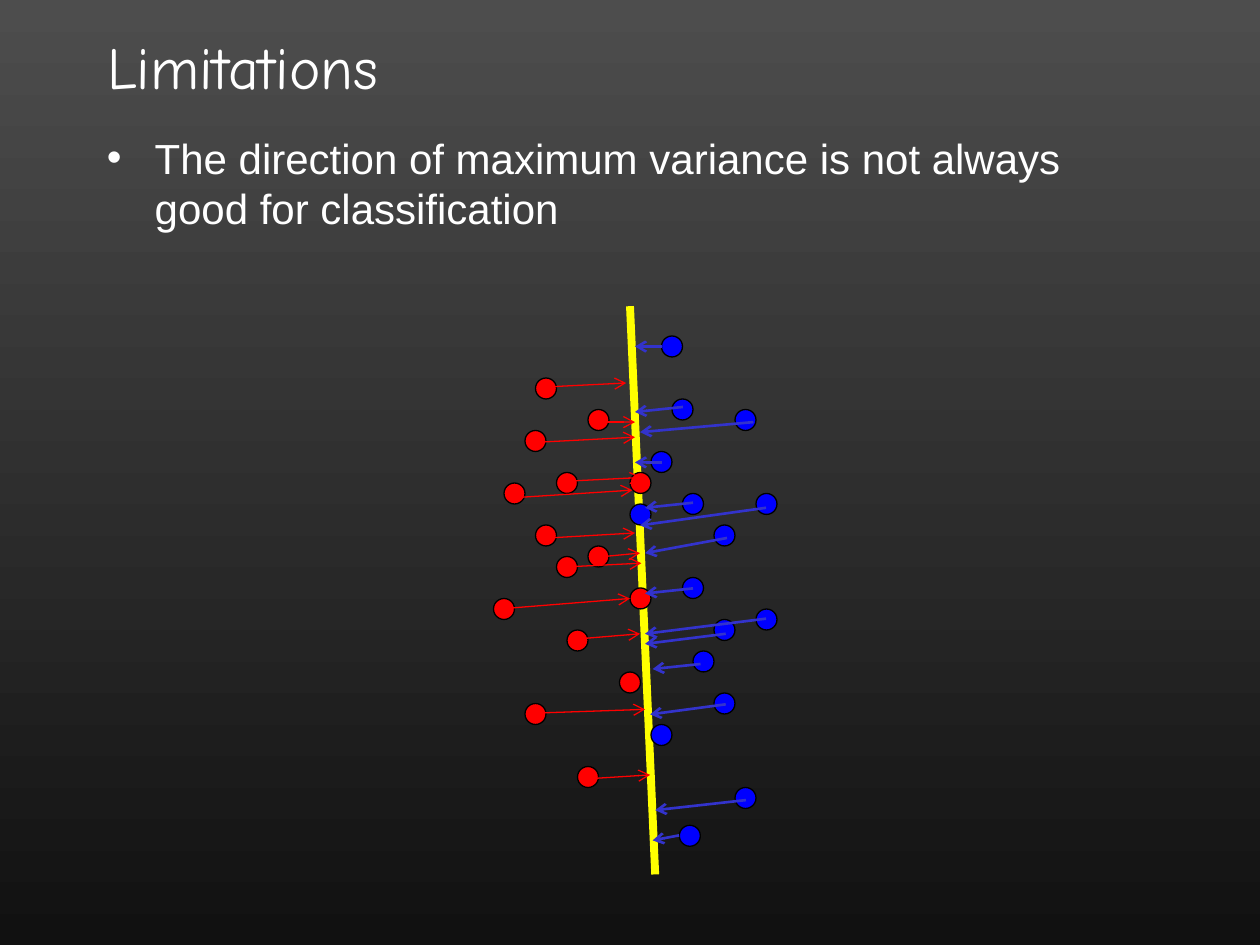
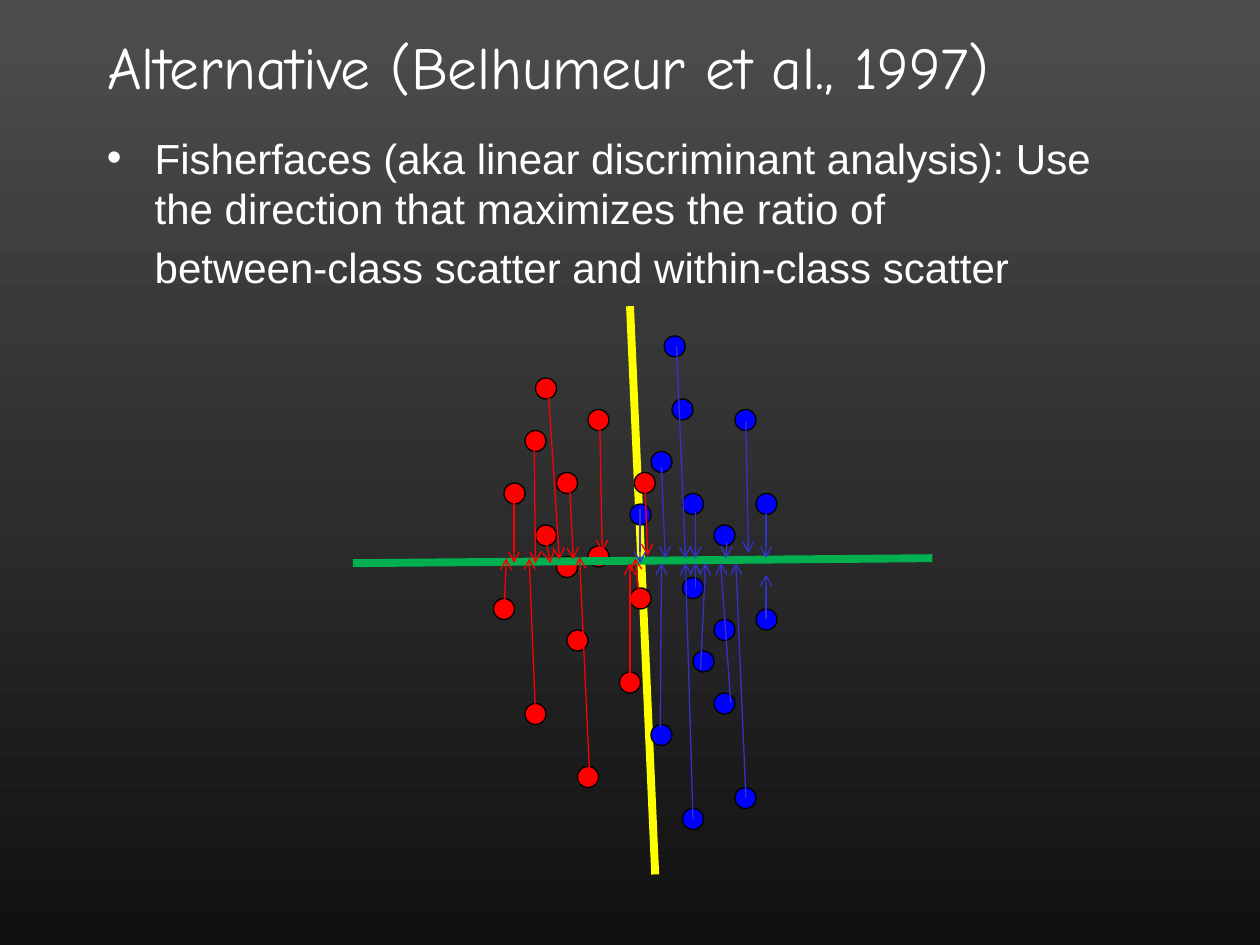
import pptx
import pptx.util
import pptx.dml.color
import pptx.enum.shapes
import pptx.enum.text
import pptx.oxml
import pptx.oxml.ns
from collections import namedtuple
from dataclasses import dataclass

Inches = pptx.util.Inches
Pt = pptx.util.Pt


@dataclass(frozen=True)
class Theme:
    sky: str = "4D4D4D"
    ground: str = "111111"
    ink: str = "FFFFFF"
    outline: str = "000000"
    red_class: str = "FF0000"
    blue_class: str = "0000FF"
    blue_arrow: str = "3333CC"
    variance_axis: str = "FFFF00"
    fisher_axis: str = "00B050"
    title_font: str = "Comic Neue"
    body_font: str = "Arial"
    title_size: float = 34
    body_size: float = 24
    paragraph_gap: float = 4.8
    axis_width: float = 4.5
    bold_arrow: float = 1.5
    thin_line: float = 0.75


THEME = Theme()
WIDTH, HEIGHT = 10, 7.5

Box = namedtuple("Box", "left top width height")
TITLE_BOX = Box(0.075 * WIDTH, 0.01 * HEIGHT, 0.85 * WIDTH, 0.12 * HEIGHT)
BODY_BOX = Box(0.075 * WIDTH, 1, 0.85 * WIDTH, 0.16 * HEIGHT)
PLOT_BOX = Box(2, 2, 6, 5)
DOT_COLUMNS, DOT_ROWS = 72, 60
ARROW_COLUMNS, ARROW_ROWS = 6, 5
DOT_CELLS = 2
BULLET_INDENT = 0.38

RED_DOTS = [(27, 12), (29, 21), (26, 17), (24, 22), (27, 26), (30, 36), (32, 28),
            (23, 33), (29, 29), (26, 43), (32, 15), (36, 32), (35, 40), (31, 49)]
BLUE_DOTS = [(41, 23), (38, 19), (36, 24), (44, 26), (42, 38), (46, 15), (44, 35),
             (41, 31), (38, 45), (40, 14), (48, 23), (48, 34), (44, 42), (46, 51)]

VARIANCE_AXIS = (3, 0.43, 3.2, 4.94)
FISHER_AXIS = (0.8, 2.47, 5.4, 2.43)

VARIANCE_BLUE_ARROWS = [
    (3.25, 0.75, 3.04, 0.75), (3.42, 1.23, 3.04, 1.27), (3.98, 1.35, 3.08, 1.43),
    (4.08, 2.03, 3.08, 2.17), (3.5, 1.99, 3.12, 2.03), (3.5, 2.67, 3.12, 2.71),
    (3.56, 3.27, 3.18, 3.31), (3.76, 3.59, 3.16, 3.67), (3.92, 4.35, 3.2, 4.43),
    (3.39, 4.63, 3.18, 4.67), (3.76, 3.03, 3.12, 3.11), (4.08, 2.91, 3.12, 3.03),
    (3.77, 2.27, 3.12, 2.39), (3.25, 1.67, 3.04, 1.67)]
VARIANCE_RED_ARROWS = [
    (2.36, 1.07, 2.97, 1.04), (2.27, 1.51, 3.04, 1.47), (2.76, 1.35, 3.04, 1.35),
    (2.08, 1.95, 3.02, 1.89), (2.48, 1.82, 3.09, 1.79), (2.48, 2.5, 3.09, 2.47),
    (2.35, 2.27, 3.04, 2.23), (2.76, 2.42, 3.08, 2.39), (2, 2.83, 3, 2.75),
    (2.24, 3.66, 3.12, 3.63), (2.68, 4.18, 3.16, 4.15), (2.6, 3.07, 3.08, 3.03)]
FISHER_RED_ARROWS = [
    (2.08, 1.92, 2.08, 2.47), (2.25, 3.67, 2.2, 2.43), (2.76, 1.35, 2.78, 2.38),
    (2.68, 4.17, 2.6, 2.42), (2.35, 1.07, 2.44, 2.44), (2.24, 1.56, 2.25, 2.47),
    (2.52, 1.83, 2.55, 2.44), (2, 2.85, 2.02, 2.43), (3, 3.42, 3, 2.47),
    (2.32, 2.22, 2.37, 2.47), (3.12, 1.87, 3.14, 2.41), (3.08, 2.79, 3.04, 2.43)]
FISHER_BLUE_ARROWS = [
    (3.92, 1.35, 3.94, 2.39), (4.08, 2.91, 4.08, 2.56), (3.37, 0.75, 3.44, 2.43),
    (3.92, 4.33, 3.84, 2.47), (3.08, 2.04, 3.08, 2.47), (3.25, 1.71, 3.28, 2.43),
    (3.52, 2.06, 3.52, 2.43), (3.24, 3.77, 3.25, 2.47), (3.5, 4.5, 3.44, 2.47),
    (3.52, 2.67, 3.52, 2.47), (3.56, 3.31, 3.6, 2.47), (3.8, 3.58, 3.72, 2.47),
    (3.77, 2.31, 3.76, 2.43), (4.08, 2.08, 4.08, 2.43)]


def rgb(color):
    return pptx.dml.color.RGBColor.from_string(color)


def add_child(parent, tag, **attributes):
    child = pptx.oxml.parse_xml(f"<{tag} {pptx.oxml.ns.nsdecls('a')}/>")
    for key, value in attributes.items():
        child.set(key, value)
    parent.append(child)


def add_run(paragraph, text, font, size):
    run = paragraph.add_run()
    run.text = text
    run.font.name = font
    run.font.size = Pt(size)
    run.font.color.rgb = rgb(THEME.ink)


def paint_background(master):
    fill = master.background.fill
    fill.gradient()
    fill.gradient_angle = 270
    for stop, color, position in zip(fill.gradient_stops, (THEME.sky, THEME.ground), (0, 1)):
        stop.color.rgb = rgb(color)
        stop.position = position


def place_title(slide, box, text):
    title = slide.shapes.title
    title.left, title.top, title.width, title.height = map(Inches, box)
    frame = title.text_frame
    frame.auto_size = pptx.enum.text.MSO_AUTO_SIZE.NONE
    frame.vertical_anchor = pptx.enum.text.MSO_ANCHOR.MIDDLE
    heading = frame.paragraphs[0]
    heading.alignment = pptx.enum.text.PP_ALIGN.LEFT
    add_run(heading, text, THEME.title_font, THEME.title_size)


def place_body(slide, box, statements):
    frame = slide.shapes.add_textbox(*map(Inches, box)).text_frame
    frame.word_wrap = True
    for index, statement in enumerate(statements):
        paragraph = frame.add_paragraph() if index else frame.paragraphs[0]
        paragraph.space_before = Pt(THEME.paragraph_gap)
        properties = paragraph._p.get_or_add_pPr()
        properties.set("marL", str(Inches(BULLET_INDENT)))
        if index == 0:
            properties.set("indent", str(-Inches(BULLET_INDENT)))
            add_child(properties, "a:buFont", typeface=THEME.body_font)
            add_child(properties, "a:buChar", char="•")
        add_run(paragraph, statement, THEME.body_font, THEME.body_size)


def draw_line(slide, box, ends, color, width, arrow=False):
    column, row = box.width / ARROW_COLUMNS, box.height / ARROW_ROWS
    x1, y1, x2, y2 = ends
    line = slide.shapes.add_connector(
        pptx.enum.shapes.MSO_CONNECTOR.STRAIGHT,
        Inches(box.left + x1 * column), Inches(box.top + y1 * row),
        Inches(box.left + x2 * column), Inches(box.top + y2 * row))
    line.line.color.rgb = rgb(color)
    line.line.width = Pt(width)
    if arrow:
        add_child(line.line._get_or_add_ln(), "a:tailEnd", type="arrow")
    add_child(line._element.spPr, "a:effectLst")


def draw_dots(slide, box, cells, color):
    column, row = box.width / DOT_COLUMNS, box.height / DOT_ROWS
    for x, y in cells:
        dot = slide.shapes.add_shape(
            pptx.enum.shapes.MSO_SHAPE.OVAL,
            Inches(box.left + x * column), Inches(box.top + y * row),
            Inches(DOT_CELLS * column), Inches(DOT_CELLS * row))
        dot.shadow.inherit = False
        dot.fill.solid()
        dot.fill.fore_color.rgb = rgb(color)
        dot.line.color.rgb = rgb(THEME.outline)
        dot.line.width = Pt(THEME.thin_line)


def draw_arrows(slide, box, arrows, color, width):
    for ends in arrows:
        draw_line(slide, box, ends, color, width, arrow=True)


def add_scatter_slide(deck, title, statements, moved_red, moved_blue):
    slide = deck.slides.add_slide(deck.slide_layouts[5])
    draw_line(slide, PLOT_BOX, VARIANCE_AXIS, THEME.variance_axis, THEME.axis_width)
    place_title(slide, TITLE_BOX, title)
    place_body(slide, BODY_BOX, statements)
    draw_dots(slide, PLOT_BOX, RED_DOTS + moved_red, THEME.red_class)
    draw_dots(slide, PLOT_BOX, BLUE_DOTS + moved_blue, THEME.blue_class)
    return slide


def main():
    deck = pptx.Presentation()
    deck.slide_width, deck.slide_height = Inches(WIDTH), Inches(HEIGHT)
    paint_background(deck.slide_master)

    limitations = add_scatter_slide(
        deck, "Limitations",
        ["The direction of maximum variance is not always good for classification"],
        [(36, 21)], [(39, 8), (40.7, 54.6)])
    draw_arrows(limitations, PLOT_BOX, VARIANCE_BLUE_ARROWS, THEME.blue_arrow, THEME.bold_arrow)
    draw_arrows(limitations, PLOT_BOX, VARIANCE_RED_ARROWS, THEME.red_class, THEME.thin_line)

    alternative = add_scatter_slide(
        deck, "Alternative (Belhumeur et al., 1997)",
        ["Fisherfaces (aka linear discriminant analysis): Use the direction "
         "that maximizes the ratio of",
         "between-class scatter and within-class scatter"],
        [(36.4, 21)], [(39.25, 8), (41, 53)])
    draw_line(alternative, PLOT_BOX, FISHER_AXIS, THEME.fisher_axis, THEME.axis_width)
    draw_arrows(alternative, PLOT_BOX, FISHER_RED_ARROWS, THEME.red_class, THEME.thin_line)
    draw_arrows(alternative, PLOT_BOX, FISHER_BLUE_ARROWS, THEME.blue_arrow, THEME.thin_line)

    deck.save("out.pptx")


if __name__ == "__main__":
    main()
